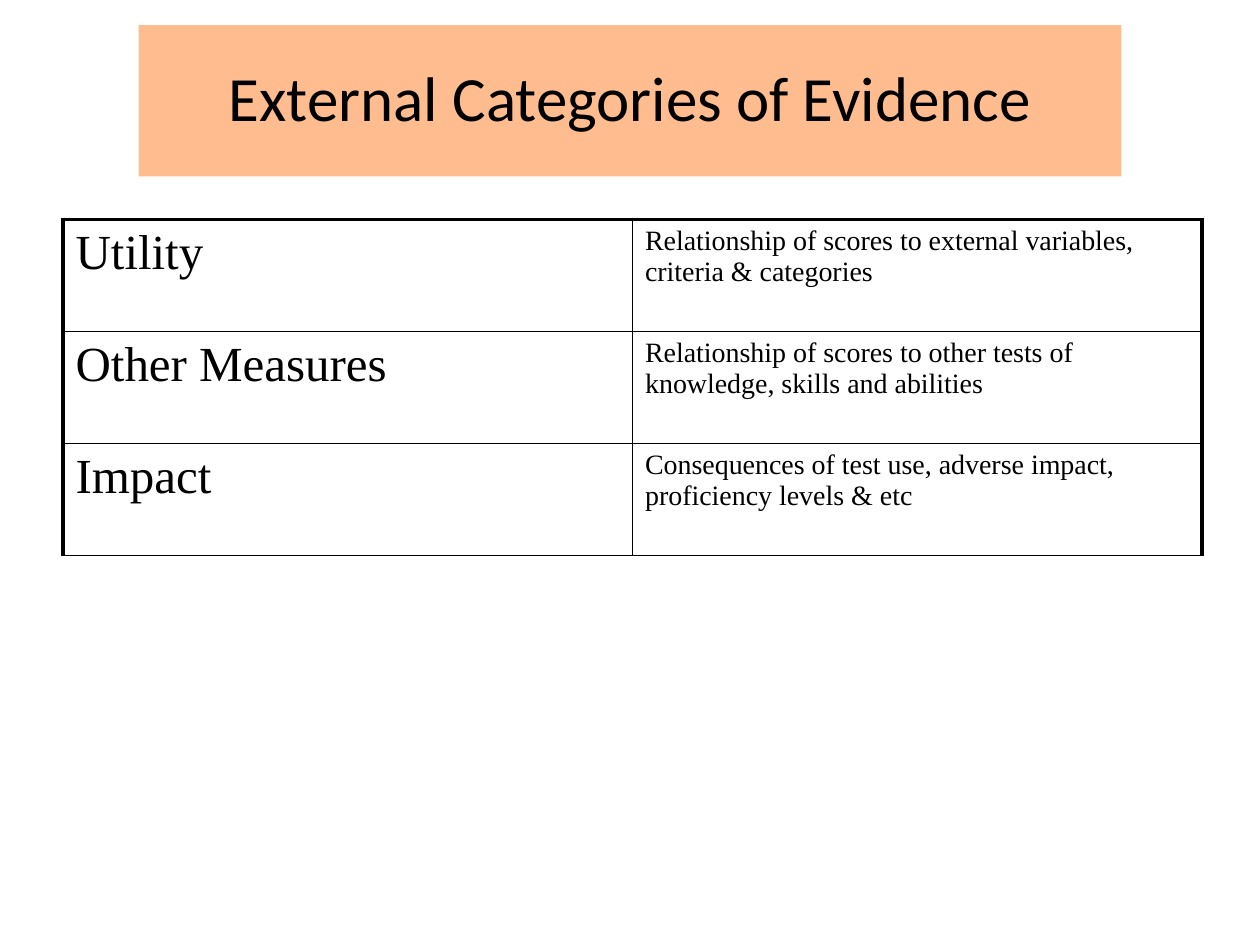
from lxml.etree import SubElement
from pptx import Presentation
from pptx.dml.color import RGBColor as RGB
from pptx.enum.text import MSO_ANCHOR as Anchor, PP_ALIGN as Align
from pptx.oxml.ns import qn
from pptx.util import Inches, Pt

COLORS = {"banner": "FFBC8F", "paper": "FFFFFF", "ink": "000000"}
WIDTH, HEIGHT = Inches(10), Inches(7.5)
COL_WIDTH, ROW_HEIGHT = Inches(4.52), Inches(0.89)
THICK, THIN = 2.25, 1
CATEGORIES = [
    ("Utility", "Relationship of scores to external variables, criteria & categories"),
    ("Other Measures", "Relationship of scores to other tests of knowledge, skills and abilities"),
    ("Impact", "Consequences of test use, adverse impact, proficiency levels & etc"),
]


def add_run(p, text, size, font):
    """Add one formatted run to a paragraph."""
    r = p.add_run()
    r.text = text
    r.font.size, r.font.name = Pt(size), font
    r.font.color.rgb = RGB.from_string(COLORS["ink"])


def set_borders(cell, widths):
    """Draw the cell's borders, given as widths in points by side."""
    tc_pr = cell._tc.get_or_add_tcPr()
    for i, (side, width) in enumerate(widths.items()):
        ln = SubElement(tc_pr, qn(f"a:ln{side}"), w=str(Pt(width)))
        fill = SubElement(ln, qn("a:solidFill"))
        SubElement(fill, qn("a:srgbClr"), val=COLORS["ink"])
        tc_pr.insert(i, ln)


def add_title(s, text):
    """Turn the title placeholder into a centred banner."""
    sp = s.shapes.title
    sp.left, sp.top = int(WIDTH * 0.11), Inches(0.2)
    sp.width, sp.height = int(WIDTH * 0.78), int(HEIGHT * 0.16)
    sp.fill.solid()
    sp.fill.fore_color.rgb = RGB.from_string(COLORS["banner"])
    tf = sp.text_frame
    tf.vertical_anchor = Anchor.MIDDLE
    p = tf.paragraphs[0]
    p.alignment, p.line_spacing = Align.CENTER, 0.9
    add_run(p, text, 36, "Calibri")


def add_category_table(s, rows):
    """Add the table of categories and their descriptions."""
    n_cols = len(rows[0])
    table = s.shapes.add_table(
        len(rows), n_cols, Inches(0.5), Inches(1.74),
        COL_WIDTH * n_cols, ROW_HEIGHT * len(rows)).table
    table.first_row = table.horz_banding = False
    for col in table.columns:
        col.width = COL_WIDTH
    for i, texts in enumerate(rows):
        table.rows[i].height = ROW_HEIGHT
        for j, (text, size) in enumerate(zip(texts, (28, 16))):
            cell = table.cell(i, j)
            cell.fill.solid()
            cell.fill.fore_color.rgb = RGB.from_string(COLORS["paper"])
            add_run(cell.text_frame.paragraphs[0], text, size, "Times New Roman")
            set_borders(cell, {
                "L": THICK if j == 0 else THIN,
                "R": THICK if j == n_cols - 1 else THIN,
                "T": THICK if i == 0 else THIN,
                "B": THIN,
            })


def main():
    """Build and save the slide."""
    prs = Presentation()
    prs.slide_width, prs.slide_height = WIDTH, HEIGHT
    s = prs.slides.add_slide(prs.slide_layouts[5])
    add_title(s, "External Categories of Evidence")
    add_category_table(s, CATEGORIES)
    prs.save("out.pptx")


if __name__ == "__main__":
    main()
